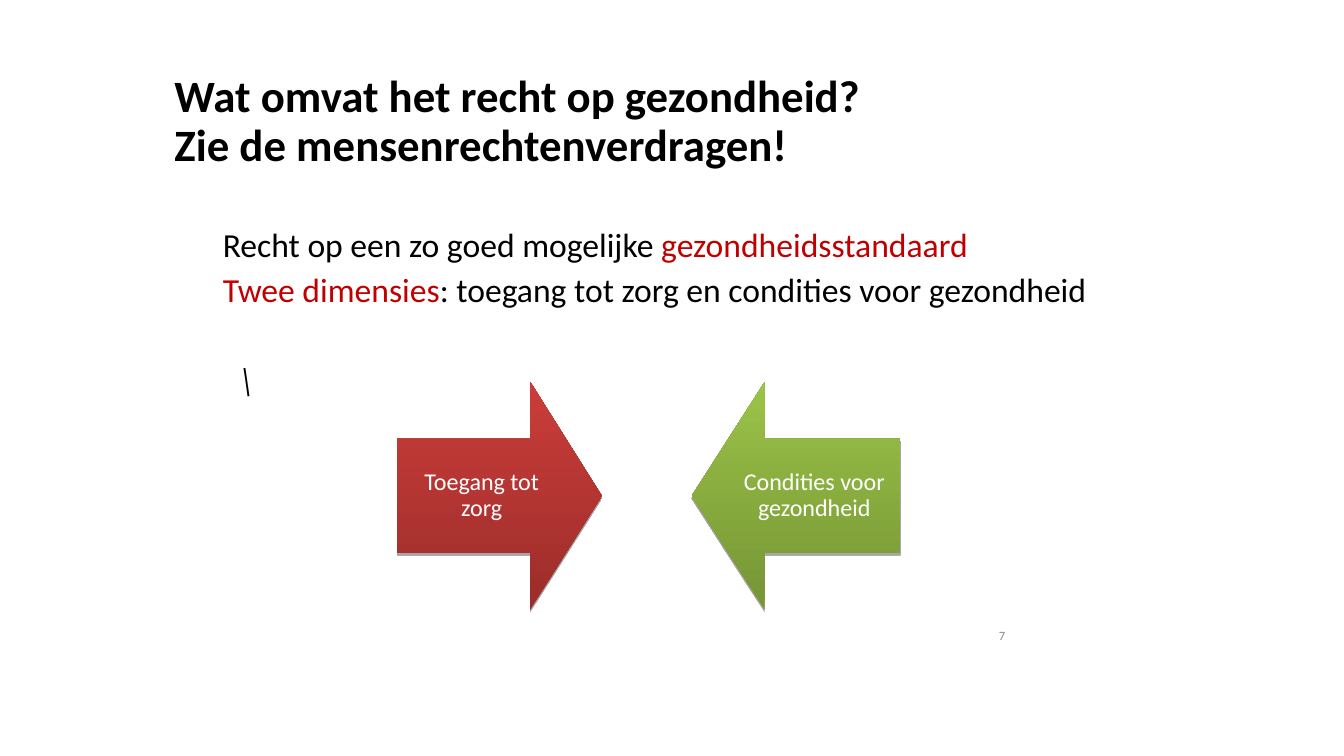
from dataclasses import dataclass

from lxml import etree
from pptx import Presentation
from pptx.dml.color import RGBColor
from pptx.enum.shapes import MSO_SHAPE
from pptx.enum.text import MSO_ANCHOR, PP_ALIGN
from pptx.oxml.ns import qn
from pptx.shapes.autoshape import Shape
from pptx.slide import Slide
from pptx.text.text import TextFrame, _Paragraph
from pptx.util import Inches, Pt

RIGHT_ARROW, LEFT_ARROW = MSO_SHAPE.RIGHT_ARROW, MSO_SHAPE.LEFT_ARROW
TOP, MIDDLE = MSO_ANCHOR.TOP, MSO_ANCHOR.MIDDLE
LEFT, CENTER, RIGHT = PP_ALIGN.LEFT, PP_ALIGN.CENTER, PP_ALIGN.RIGHT

COLORS = {
    "black": "000000",
    "white": "FFFFFF",
    "accent": "C00000",
    "grey": "898989",
    "red_dark": "9B2D2A",
    "red_light": "CB3D3A",
    "green_dark": "769535",
    "green_light": "9BC348",
}
FONT = "Calibri"
ARROW_TOP, ARROW_HEIGHT = 3.79, 2.26


@dataclass(frozen=True)
class Arrow:
    kind: MSO_SHAPE
    left: float
    width: float
    label: str
    dark: str
    light: str


@dataclass(frozen=True)
class Line:
    """A body line as (text, colour) segments."""
    segments: tuple[tuple[str, str], ...]
    before: float = 0


ARROWS = (
    Arrow(RIGHT_ARROW, 3.94, 2.03, "Toegang tot zorg", "red_dark", "red_light"),
    Arrow(LEFT_ARROW, 6.86, 2.07, "Condities voor gezondheid", "green_dark", "green_light"),
)
BODY = (
    Line((("Recht op een zo goed mogelijke ", "black"), ("gezondheidsstandaard", "accent"))),
    Line((("Twee dimensies", "accent"),
          (": toegang tot zorg en condities voor gezondheid", "black")), 6),
)


def rgb(name: str) -> RGBColor:
    return RGBColor.from_string(COLORS[name])


def set_frame(tf: TextFrame, inset_x: float, inset_y: float, anchor: MSO_ANCHOR) -> None:
    tf.word_wrap = True
    tf.vertical_anchor = anchor
    tf.margin_left = tf.margin_right = Inches(inset_x)
    tf.margin_top = tf.margin_bottom = Inches(inset_y)


def style(p: _Paragraph, size: float, color: str = "black", align: PP_ALIGN = LEFT,
          spacing: float = 0.9, font: str = FONT) -> None:
    p.alignment = align
    p.line_spacing = spacing
    p.font.name = font
    p.font.size = Pt(size)
    p.font.color.rgb = rgb(color)


def add_text_box(slide: Slide, left: float, top: float, width: float, height: float,
                 inset_x: float, inset_y: float, anchor: MSO_ANCHOR) -> TextFrame:
    sp = slide.shapes.add_textbox(Inches(left), Inches(top), Inches(width), Inches(height))
    set_frame(sp.text_frame, inset_x, inset_y, anchor)
    return sp.text_frame


def add_title(slide: Slide) -> None:
    tf = add_text_box(slide, 1.69, 0.4, 9.47, 1.63, 0.04, 0.02, MIDDLE)
    tf.word_wrap = False
    p = tf.paragraphs[0]
    p.text = "Wat omvat het recht op gezondheid?\vZie de mensenrechtenverdragen!"
    style(p, 32)
    p.font.bold = True


def add_body(slide: Slide) -> None:
    tf = add_text_box(slide, 2.17, 2.25, 9, 3.71, 0.04, 0.02, TOP)
    for i, line in enumerate(BODY):
        p = tf.add_paragraph() if i else tf.paragraphs[0]
        style(p, 24)
        p.space_before = Pt(line.before)
        for text, color in line.segments:
            r = p.add_run()
            r.text = text
            r.font.color.rgb = rgb(color)
    p = tf.add_paragraph()
    p.text = "\\"
    style(p, 28, font="Vollkorn")
    p.font.italic = True
    p.space_before = Pt(38)
    pPr = p._p.get_or_add_pPr()
    pPr.set("marL", str(Inches(0.28)))
    pPr.set("indent", str(Inches(-0.11)))


def add_shadow(sp: Shape) -> None:
    sp.shadow.inherit = False
    effects = sp._element.spPr.find(qn("a:effectLst"))
    shadow = etree.SubElement(effects, qn("a:outerShdw"), blurRad="0", dist=str(Pt(1.8)),
                              dir="5400000", rotWithShape="0")
    color = etree.SubElement(shadow, qn("a:srgbClr"), val=COLORS["black"])
    etree.SubElement(color, qn("a:alpha"), val="35000")


def add_arrow(slide: Slide, arrow: Arrow) -> None:
    sp = slide.shapes.add_shape(arrow.kind, Inches(arrow.left), Inches(ARROW_TOP),
                                Inches(arrow.width), Inches(ARROW_HEIGHT))
    sp.adjustments[0] = 0.5
    sp.adjustments[1] = 0.35
    sp.fill.gradient()
    sp.fill.gradient_angle = 90
    for stop, color in zip(sp.fill.gradient_stops, (arrow.dark, arrow.light)):
        stop.color.rgb = rgb(color)
    sp.line.fill.background()
    add_shadow(sp)
    set_frame(sp.text_frame, 0.13, 0.09, MIDDLE)
    p = sp.text_frame.paragraphs[0]
    p.text = arrow.label
    style(p, 17.2, "white", CENTER)


def add_page_number(slide: Slide) -> None:
    tf = add_text_box(slide, 8.29, 6.15, 1.75, 0.3, 0.07, 0.04, MIDDLE)
    p = tf.paragraphs[0]
    p.text = "7"
    style(p, 9, "grey", RIGHT, 1.0)


def main() -> None:
    prs = Presentation()
    prs.slide_width, prs.slide_height = Inches(13.33), Inches(7.5)
    slide = prs.slides.add_slide(prs.slide_layouts[6])
    add_title(slide)
    add_body(slide)
    for arrow in ARROWS:
        add_arrow(slide, arrow)
    add_page_number(slide)
    prs.save("out.pptx")


if __name__ == "__main__":
    main()
